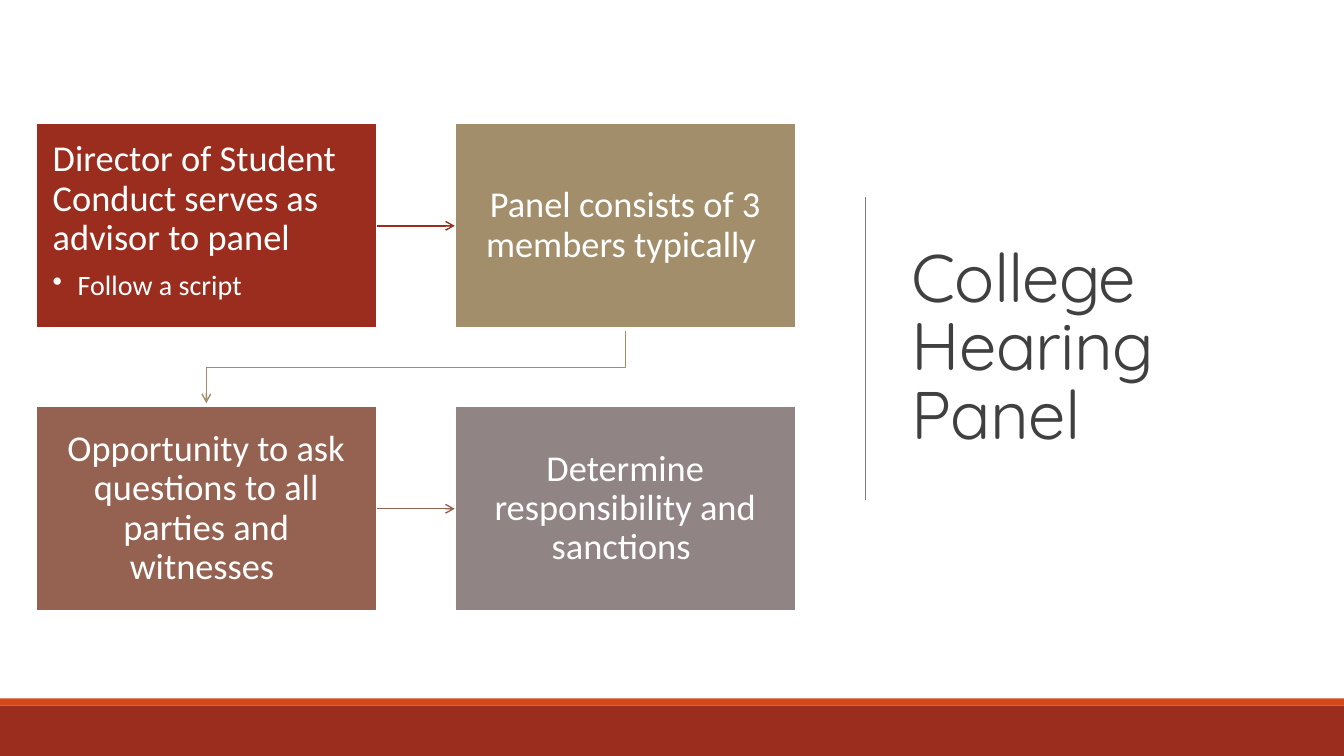
import pptx
import pptx.dml.color
import pptx.enum.shapes
import pptx.enum.text
import pptx.oxml
import pptx.oxml.ns
import pptx.util
from pptx.util import Cm, Pt

RECTANGLE = pptx.enum.shapes.MSO_SHAPE.RECTANGLE
STRAIGHT = pptx.enum.shapes.MSO_CONNECTOR.STRAIGHT
ALIGN = pptx.enum.text.PP_ALIGN
ANCHOR = pptx.enum.text.MSO_ANCHOR

PAGE_WIDTH, PAGE_HEIGHT = Cm(33.87), Cm(19.05)

# Text, sub-point and colour of each step, row by row
STEPS = [
    ("Director of Student Conduct serves as advisor to panel", "Follow a script", "9B2D1F"),
    ("Panel consists of 3 members typically ", None, "A28E6A"),
    ("Opportunity to ask questions to all parties and witnesses ", None, "956251"),
    ("Determine responsibility and sanctions ", None, "918485"),
]


def colour(hex_code):
    return pptx.dml.color.RGBColor.from_string(hex_code)


def add_element(parent, tag, **attributes):
    element = pptx.oxml.parse_xml(f"<a:{tag} {pptx.oxml.ns.nsdecls('a')}/>")
    for name, value in attributes.items():
        element.set(name, value)
    parent.append(element)


def add_block(page, left, top, width, height, fill):
    block = page.shapes.add_shape(RECTANGLE, left, top, width, height)
    block.shadow.inherit = False
    block.fill.solid()
    block.fill.fore_color.rgb = colour(fill)
    block.line.fill.background()
    return block


def style_line(line_shape, hex_code, width, arrow=False):
    line_shape.line.color.rgb = colour(hex_code)
    line_shape.line.width = Pt(width)
    if arrow:
        add_element(line_shape.line._get_or_add_ln(), "tailEnd", type="arrow")


def add_line(page, start, end, hex_code, width, arrow=False):
    line = page.shapes.add_connector(STRAIGHT, *start, *end)
    style_line(line, hex_code, width, arrow)
    add_element(line._element.spPr, "effectLst")
    return line


def style_paragraph(para, size, hex_code, font, spacing, align):
    para.font.size = Pt(size)
    para.font.name = font
    para.font.color.rgb = colour(hex_code)
    para.line_spacing = spacing
    para.alignment = align


def add_step(page, left, top, width, height, step):
    text, sub_point, fill = step
    box = add_block(page, left, top, width, height, fill)
    box.line.color.rgb = colour("FFFFFF")
    box.line.width = Pt(1.25)
    frame = box.text_frame
    frame.word_wrap = True
    frame.margin_left = frame.margin_right = Cm(0.43)
    frame.margin_top = frame.margin_bottom = Cm(0.43)
    frame.vertical_anchor = ANCHOR.TOP if sub_point else ANCHOR.MIDDLE
    para = frame.paragraphs[0]
    para.text = text
    style_paragraph(para, 26, "FFFFFF", "Calibri", 0.9, ALIGN.LEFT if sub_point else ALIGN.CENTER)
    para.space_after = Pt(9)
    if sub_point:
        bullet = frame.add_paragraph()
        bullet.text = sub_point
        bullet.level = 1
        style_paragraph(bullet, 20, "FFFFFF", "Calibri", 0.9, ALIGN.LEFT)
        properties = bullet._p.get_or_add_pPr()
        properties.set("marL", str(Cm(0.63)))
        properties.set("indent", str(-Cm(0.63)))
        # The bullet character goes before the font defaults
        add_element(properties, "buChar", char="•")
        properties.append(properties.find(pptx.oxml.ns.qn("a:defRPr")))
    return box


def add_row_arrow(page, source, target, hex_code):
    middle = source.top + source.height // 2
    arrow = add_line(page, (source.left + source.width, middle), (target.left, middle), hex_code, 1, True)
    arrow.begin_connect(source, 3)
    arrow.end_connect(target, 1)


def add_return_arrow(page, source, target, hex_code):
    gap = Cm(0.08)
    start_x = source.left + source.width // 2
    end_x = target.left + target.width // 2
    bottom = source.top + source.height
    bend = (bottom + target.top) // 2
    builder = page.shapes.build_freeform(start_x, bottom + gap)
    builder.add_line_segments([(start_x, bend), (end_x, bend), (end_x, target.top - gap)], close=False)
    route = builder.convert_to_shape()
    route.shadow.inherit = False
    route.fill.background()
    style_line(route, hex_code, 1, True)


def add_process(page, left, top, width, height):
    box_width, box_height = Cm(8.6), Cm(5.16)
    column_step, row_step = width - box_width, height - box_height
    boxes = []
    for index, step in enumerate(STEPS):
        row, column = divmod(index, 2)
        boxes.append(add_step(page, left + column * column_step, top + row * row_step,
                              box_width, box_height, step))
    for first in (0, 2):
        add_row_arrow(page, boxes[first], boxes[first + 1], STEPS[first][2])
    add_return_arrow(page, boxes[1], boxes[2], STEPS[1][2])


def add_title(page, left, top, width, height):
    title = page.shapes.title
    title.left, title.top, title.width, title.height = left, top, width, height
    frame = title.text_frame
    frame.text = "College Hearing Panel"
    frame.word_wrap = True
    frame.auto_size = pptx.enum.text.MSO_AUTO_SIZE.NONE
    frame.vertical_anchor = ANCHOR.MIDDLE
    para = frame.paragraphs[0]
    style_paragraph(para, 48, "404040", "Quicksand", 0.85, ALIGN.LEFT)
    para._p.pPr.get_or_add_defRPr().set("spc", "-50")
    # Divider to the left of the title
    divider_x = left - Cm(0.9)
    add_line(page, (divider_x, top + Cm(3.17)), (divider_x, top + Cm(10.8)), "808080", 0.5)


def add_footer(page, left, top, width, height):
    strip = Cm(0.18)
    add_block(page, left, top, width, strip, "D34817")
    add_block(page, left, top + strip, width, height - strip, "9B2D1F")


def main():
    deck = pptx.Presentation()
    deck.slide_width, deck.slide_height = PAGE_WIDTH, PAGE_HEIGHT
    page = deck.slides.add_slide(deck.slide_layouts[5])
    add_title(page, Cm(22.72), Cm(1.8), Cm(9.37), Cm(14.05))
    footer_top = Cm(17.6)
    add_footer(page, 0, footer_top, PAGE_WIDTH, PAGE_HEIGHT - footer_top)
    add_process(page, Cm(0.9), Cm(3.11), Cm(19.16), Cm(12.29))
    deck.save("out.pptx")


if __name__ == "__main__":
    main()
